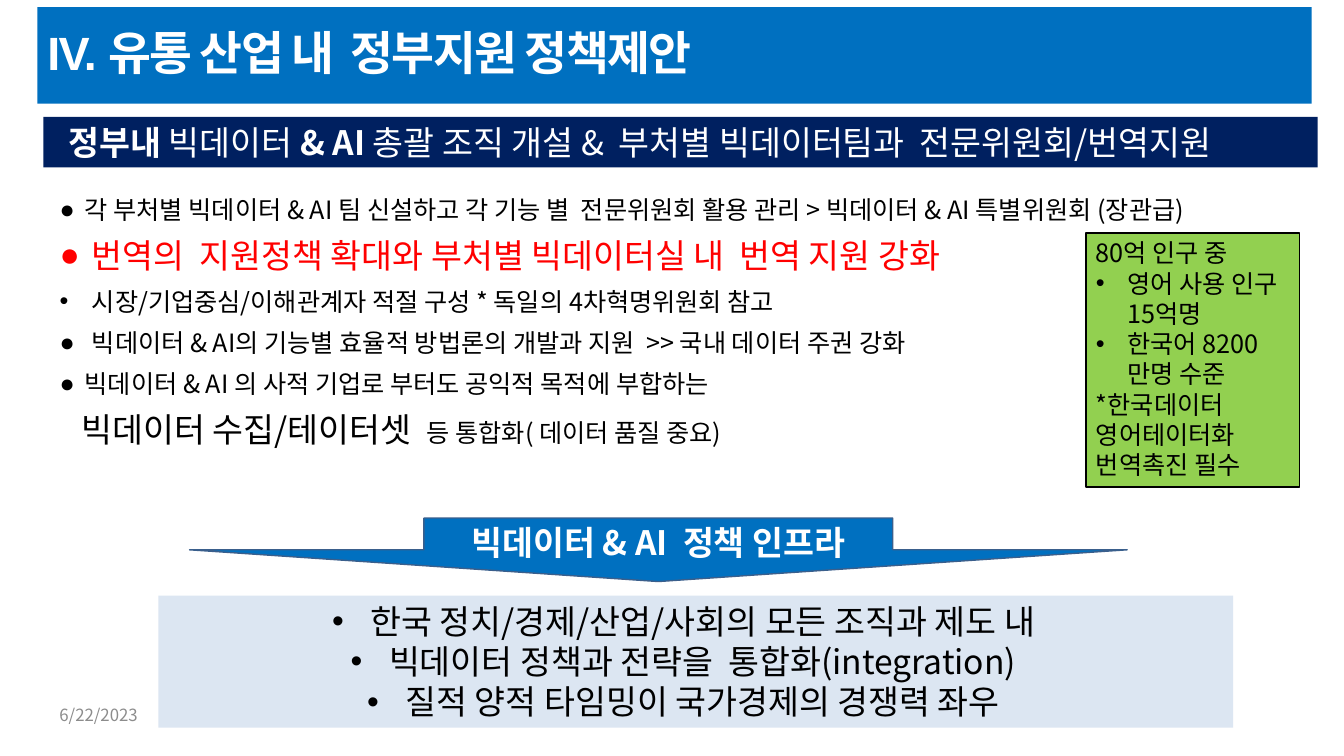
from lxml.etree import SubElement
from pptx import Presentation
from pptx.dml.color import RGBColor
from pptx.enum.shapes import MSO_SHAPE
from pptx.enum.text import MSO_ANCHOR, MSO_AUTO_SIZE, PP_ALIGN
from pptx.oxml.ns import qn
from pptx.util import Inches, Pt

WIDTH, HEIGHT = Inches(13.33), Inches(7.5)
FONT = "Noto Sans CJK KR"
WHITE = RGBColor(0xFF, 0xFF, 0xFF)
BLACK = RGBColor(0, 0, 0)
RED = RGBColor(0xFF, 0, 0)
GRAY = RGBColor(0x8C, 0x8C, 0x8C)
NAVY = RGBColor(0, 0x20, 0x60)
BLUE = RGBColor(0, 0x70, 0xC0)
EDGE = RGBColor(0x3A, 0x5F, 0x8C)
PALE = RGBColor(0xDC, 0xE6, 0xF2)
GREEN = RGBColor(0x92, 0xD0, 0x50)


def box(x, y, w, h):
    """Turn percentages of the slide into left, top, width, height."""
    return [int(WIDTH * x / 100), int(HEIGHT * y / 100),
            int(WIDTH * w / 100), int(HEIGHT * h / 100)]


def place(sp, area):
    for name, value in zip(("left", "top", "width", "height"), box(*area)):
        setattr(sp, name, value)


def paint(sp, fill, line=None):
    sp.fill.solid()
    sp.fill.fore_color.rgb = fill
    if line is None:
        sp.line.fill.background()
    else:
        sp.line.color.rgb = line
        sp.line.width = Pt(1)


def set_frame(sp, **format_values):
    tf = sp.text_frame
    values = {"word_wrap": True, "auto_size": MSO_AUTO_SIZE.NONE,
              "vertical_anchor": MSO_ANCHOR.TOP, **format_values}
    for name, value in values.items():
        setattr(tf, name, value)
    return tf


def add_run(p, text, size, color, bold=False, font=FONT):
    r = p.add_run()
    r.text = text
    for name, value in {"name": font, "size": Pt(size), "bold": bold}.items():
        setattr(r.font, name, value)
    r.font.color.rgb = color
    SubElement(r.font._element, qn("a:ea"), typeface=FONT)
    return r


def set_paragraph(p, size, align=PP_ALIGN.LEFT, bullet=None, indent=0,
                  leading=1.2, before=0):
    values = {"alignment": align, "line_spacing": Pt(size * leading),
              "space_before": Pt(before)}
    for name, value in values.items():
        setattr(p, name, value)
    pPr = p._p.get_or_add_pPr()
    pPr.set("marL", str(Inches(indent)))
    pPr.set("indent", str(-Inches(indent) if bullet else 0))
    if bullet:
        SubElement(pPr, qn("a:buFont"), typeface="Arial")
        SubElement(pPr, qn("a:buChar"), char=bullet)
    else:
        SubElement(pPr, qn("a:buNone"))


def fill_text(tf, paragraphs):
    """Each paragraph is (runs, format); each run is (text, size, color[, bold])."""
    for i, (runs, fmt) in enumerate(paragraphs):
        p = tf.add_paragraph() if i else tf.paragraphs[0]
        set_paragraph(p, max(run[1] for run in runs), **fmt)
        for run in runs:
            add_run(p, *run)


def add_panel(slide, kind, area, fill, paragraphs, line=None, **frame):
    sp = slide.shapes.add_shape(kind, *box(*area))
    sp.shadow.inherit = False
    paint(sp, fill, line)
    fill_text(set_frame(sp, **frame), paragraphs)


def add_title(slide):
    sp = slide.shapes.title
    place(sp, (2.78, 0.93, 94.82, 12.8))
    paint(sp, BLUE)
    tf = set_frame(sp, vertical_anchor=MSO_ANCHOR.MIDDLE,
                   margin_bottom=Inches(0.12))
    p = tf.paragraphs[0]
    set_paragraph(p, 33.3)
    r = add_run(p, "IV. 유통 산업 내  정부지원 정책제안", 33.3, WHITE, True, "Arial")
    r.font._element.set("spc", "-120")


def add_body(slide):
    sp = slide.placeholders[1]
    place(sp, (3.68, 25.47, 93.02, 54.93))
    lines = [
        ("●", 0.25, [("각 부처별 빅데이터 & AI 팀 신설하고 각 기능 별  전문위원회 활용 관리 > "
                      "빅데이터 & AI 특별위원회 (장관급)", 18, BLACK)]),
        ("●", 0.32, [("번역의  지원정책 확대와 부처별 빅데이터실 내  번역 지원 강화", 24, RED)]),
        ("•", 0.32, [("시장/기업중심/이해관계자 적절 구성 * 독일의 4차혁명위원회 참고", 18, BLACK)]),
        ("●", 0.32, [("빅데이터 & AI의 기능별 효율적 방법론의 개발과 지원  >> "
                      "국내 데이터 주권 강화", 18, BLACK)]),
        ("●", 0.25, [("빅데이터 & AI 의 사적 기업로 부터도 공익적 목적에 부합하는", 18, BLACK)]),
        (None, 0.22, [("빅데이터 수집/테이터셋  ", 24, BLACK),
                      ("등 통합화( 데이터 품질 중요)", 18, BLACK)]),
    ]
    fill_text(set_frame(sp), [
        (runs, {"bullet": bullet, "indent": indent, "leading": 1.08,
                "before": 10 if i else 0})
        for i, (bullet, indent, runs) in enumerate(lines)])


def main():
    prs = Presentation()
    prs.slide_width, prs.slide_height = WIDTH, HEIGHT
    slide = prs.slides.add_slide(prs.slide_layouts[1])
    add_title(slide)
    add_body(slide)

    # Headline band
    add_panel(slide, MSO_SHAPE.RECTANGLE, (3.23, 15.47, 94.82, 6.67), NAVY, [([
        ("정부내 ", 24, WHITE, True), ("빅데이터 ", 24, WHITE),
        ("& AI ", 24, WHITE, True),
        ("총괄 조직 개설 &  부처별 빅데이터팀과  전문위원회/번역지원", 24, WHITE),
    ], {})], margin_left=Inches(0.25), margin_right=0)

    # Population note
    item = {"bullet": "•", "indent": 0.31}
    notes = [("80억 인구 중", {}), ("영어 사용 인구 15억명", item),
             ("한국어 8200만명 수준", item),
             ("*한국데이터  영어테이터화 번역촉진 필수", {})]
    add_panel(slide, MSO_SHAPE.RECTANGLE, (80.8, 30.8, 15.9, 33.6), GREEN,
              [([(text, 18, BLACK)], fmt) for text, fmt in notes], BLACK)

    # Arrow leading to the goals
    add_panel(slide, MSO_SHAPE.DOWN_ARROW, (14.1, 68.53, 69.77, 8.4), BLUE,
              [([("빅데이터 & AI  정책 인프라", 24, WHITE, True)],
                {"align": PP_ALIGN.CENTER})],
              EDGE, vertical_anchor=MSO_ANCHOR.MIDDLE)

    # Goals
    goals = ["한국 정치/경제/산업/사회의 모든 조직과 제도 내",
             "빅데이터 정책과 전략을  통합화(integration)",
             "질적 양적 타임밍이 국가경제의 경쟁력 좌우"]
    add_panel(slide, MSO_SHAPE.RECTANGLE, (11.78, 78.8, 79.97, 17.47), PALE,
              [([(goal, 24, BLACK)], {"align": PP_ALIGN.CENTER, "bullet": "•",
                                      "indent": 0.38}) for goal in goals],
              margin_right=Inches(0.34))

    # Date
    date = slide.shapes.add_textbox(*box(3.68, 92.93, 33.75, 3.33))
    fill_text(set_frame(date, vertical_anchor=MSO_ANCHOR.MIDDLE),
              [([("6/22/2023", 12, GRAY)], {})])

    prs.save("out.pptx")


if __name__ == "__main__":
    main()
